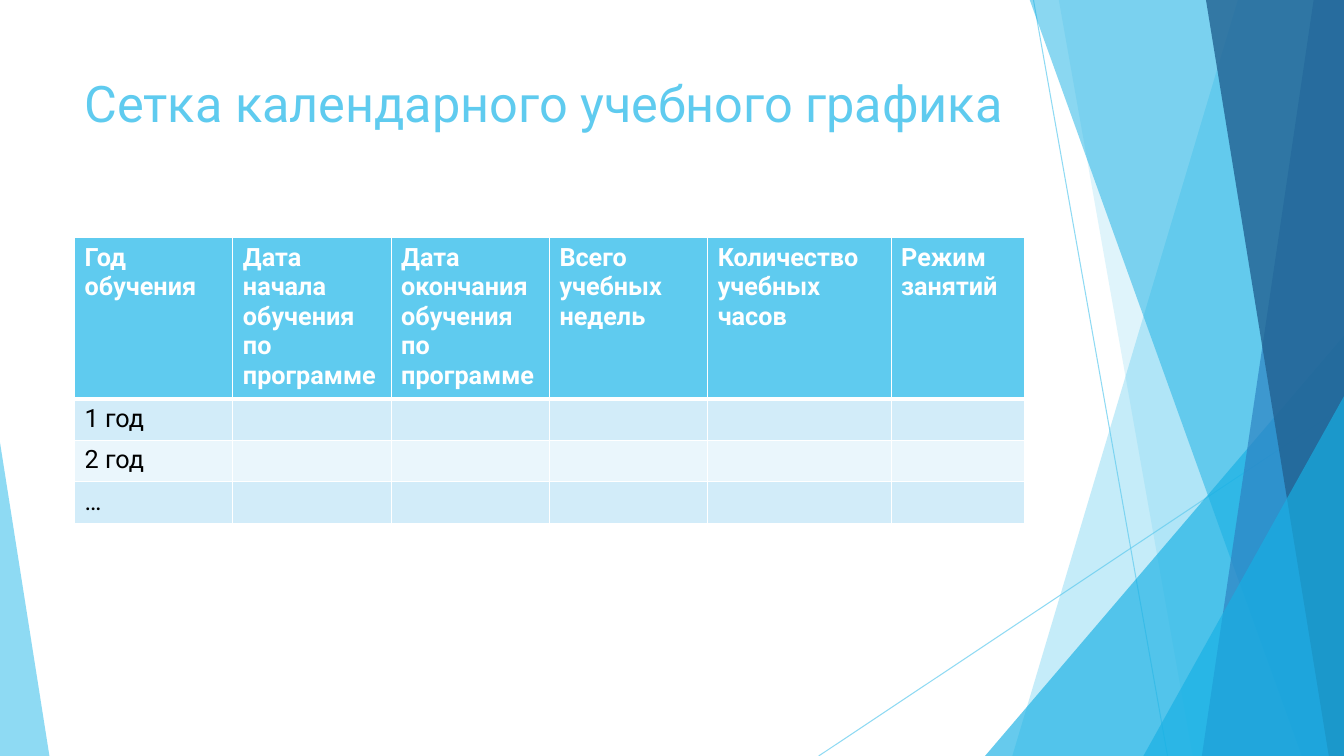
from dataclasses import dataclass
from typing import Any

from lxml import etree
from pptx import Presentation
from pptx import util as u
from pptx.dml import color
from pptx.enum import shapes, text
from pptx.oxml import ns

PX = 9144
WIDTH, HEIGHT = 1333, 750
COLORS = {
    "sky": "5FCBEF",
    "cyan": "17B0E4",
    "blue": "2E83C3",
    "navy": "226292",
    "white": "FFFFFF",
    "black": "000000",
    "band": "D2ECF9",
    "pale": "EAF6FC",
}


@dataclass
class Ray:
    start: tuple[int, int]
    end: tuple[int, int]
    tint: str
    opacity: int


@dataclass
class Pane:
    top_x: int
    bottom_x: int
    tint: str
    opacity: int


@dataclass
class Wedge:
    left: int
    top: int
    width: int
    apex: float
    tint: str
    opacity: int


@dataclass
class Column:
    heading: str
    width: int


DECOR = [
    Ray((1025, 0), (1158, HEIGHT), "sky", 70),
    Ray((WIDTH, 403), (812, HEIGHT), "sky", 70),
    Pane(1228, 1004, "sky", 36),
    Pane(1050, 1183, "sky", 20),
    Wedge(977, 333, 356, 1, "cyan", 66),
    Pane(1021, 1291, "cyan", 50),
    Pane(1303, 1192, "blue", 70),
    Pane(1196, 1318, "navy", 80),
    Wedge(1134, 393, 199, 1, "cyan", 66),
    Wedge(0, 439, 49, 0, "sky", 70),
]
COLUMNS = [
    Column("Год обучения", 157),
    Column("Дата начала обучения по программе", 157),
    Column("Дата окончания обучения по программе", 157),
    Column("Всего учебных недель", 157),
    Column("Количество учебных часов", 182),
    Column("Режим занятий", 132),
]
YEARS = ["1 год", "2 год", "…"]
HEADER_HEIGHT, YEAR_HEIGHT = 156, 41
TITLE_FORMAT = {"name": "Roboto", "size": u.Pt(36), "bold": False}
HEADER_FORMAT = {"name": "Roboto", "size": u.Pt(18), "bold": True}
YEAR_FORMAT = {"name": "Roboto", "size": u.Pt(18), "bold": False}


def rgb(tint: str) -> color.RGBColor:
    return color.RGBColor.from_string(COLORS[tint])


def set_opacity(part: Any, opacity: int) -> None:
    for tone in part._element.spPr.iter(ns.qn("a:srgbClr")):
        etree.SubElement(tone, ns.qn("a:alpha"), val=str(opacity * 1000))


def write(frame: Any, wording: str, tint: str, formats: dict[str, Any]) -> None:
    run = frame.paragraphs[0].add_run()
    run.text = wording
    for key, value in formats.items():
        setattr(run.font, key, value)
    run.font.color.rgb = rgb(tint)


def draw_ray(slide: Any, ray: Ray) -> None:
    ends = [value * PX for value in ray.start + ray.end]
    line = slide.shapes.add_connector(shapes.MSO_CONNECTOR.STRAIGHT, *ends)
    line.line.width = u.Pt(0.75)
    line.line.color.rgb = rgb(ray.tint)
    etree.SubElement(line._element.spPr, ns.qn("a:effectLst"))
    set_opacity(line, ray.opacity)


def paint(area: Any, tint: str, opacity: int) -> None:
    area.shadow.inherit = False
    area.line.fill.background()
    area.fill.solid()
    area.fill.fore_color.rgb = rgb(tint)
    set_opacity(area, opacity)


def draw_pane(slide: Any, pane: Pane) -> None:
    outline = slide.shapes.build_freeform(pane.top_x, -1, scale=PX)
    outline.add_line_segments(
        [(WIDTH, -1), (WIDTH, HEIGHT), (pane.bottom_x, HEIGHT)], close=True
    )
    paint(outline.convert_to_shape(), pane.tint, pane.opacity)


def draw_wedge(slide: Any, wedge: Wedge) -> None:
    box = (wedge.left, wedge.top, wedge.width, HEIGHT - wedge.top)
    triangle = slide.shapes.add_shape(
        shapes.MSO_SHAPE.ISOSCELES_TRIANGLE, *(value * PX for value in box)
    )
    triangle.adjustments[0] = wedge.apex
    paint(triangle, wedge.tint, wedge.opacity)


def draw_title(slide: Any, wording: str) -> None:
    box = slide.shapes.add_textbox(74 * PX, 67 * PX, 940 * PX, 144 * PX)
    box.text_frame.word_wrap = True
    box.text_frame.vertical_anchor = text.MSO_ANCHOR.TOP
    write(box.text_frame, wording, "sky", TITLE_FORMAT)


def style_cell(cell: Any, tint: str, borders: dict[str, int]) -> None:
    properties = cell._tc.get_or_add_tcPr()
    for side, points in borders.items():
        edge = etree.SubElement(properties, ns.qn(f"a:ln{side}"), w=str(u.Pt(points)))
        fill = etree.SubElement(edge, ns.qn("a:solidFill"))
        etree.SubElement(fill, ns.qn("a:srgbClr"), val=COLORS["white"])
    cell.fill.solid()
    cell.fill.fore_color.rgb = rgb(tint)


def draw_schedule(slide: Any) -> None:
    heights = [HEADER_HEIGHT] + [YEAR_HEIGHT] * len(YEARS)
    width = sum(column.width for column in COLUMNS)
    schedule = slide.shapes.add_table(
        len(heights), len(COLUMNS), 74 * PX, 236 * PX, width * PX, sum(heights) * PX
    ).table
    schedule.horz_banding = False
    for column, spec_column in zip(schedule.columns, COLUMNS):
        column.width = spec_column.width * PX
    for index, height in enumerate(heights):
        schedule.rows[index].height = height * PX
        tint = "sky" if index == 0 else ("pale", "band")[index % 2]
        borders = {
            "L": 1,
            "R": 1,
            "T": 3 if index == 1 else 1,
            "B": 3 if index == 0 else 1,
        }
        for cell in schedule.rows[index].cells:
            style_cell(cell, tint, borders)
    for index, column in enumerate(COLUMNS):
        write(schedule.cell(0, index).text_frame, column.heading, "white", HEADER_FORMAT)
    for index, year in enumerate(YEARS, start=1):
        write(schedule.cell(index, 0).text_frame, year, "black", YEAR_FORMAT)


def main() -> None:
    deck = Presentation()
    deck.slide_width, deck.slide_height = WIDTH * PX, HEIGHT * PX
    slide = deck.slides.add_slide(deck.slide_layouts[6])
    painters = {Ray: draw_ray, Pane: draw_pane, Wedge: draw_wedge}
    for item in DECOR:
        painters[type(item)](slide, item)
    draw_title(slide, "Сетка календарного учебного графика")
    draw_schedule(slide)
    deck.save("out.pptx")


if __name__ == "__main__":
    main()
